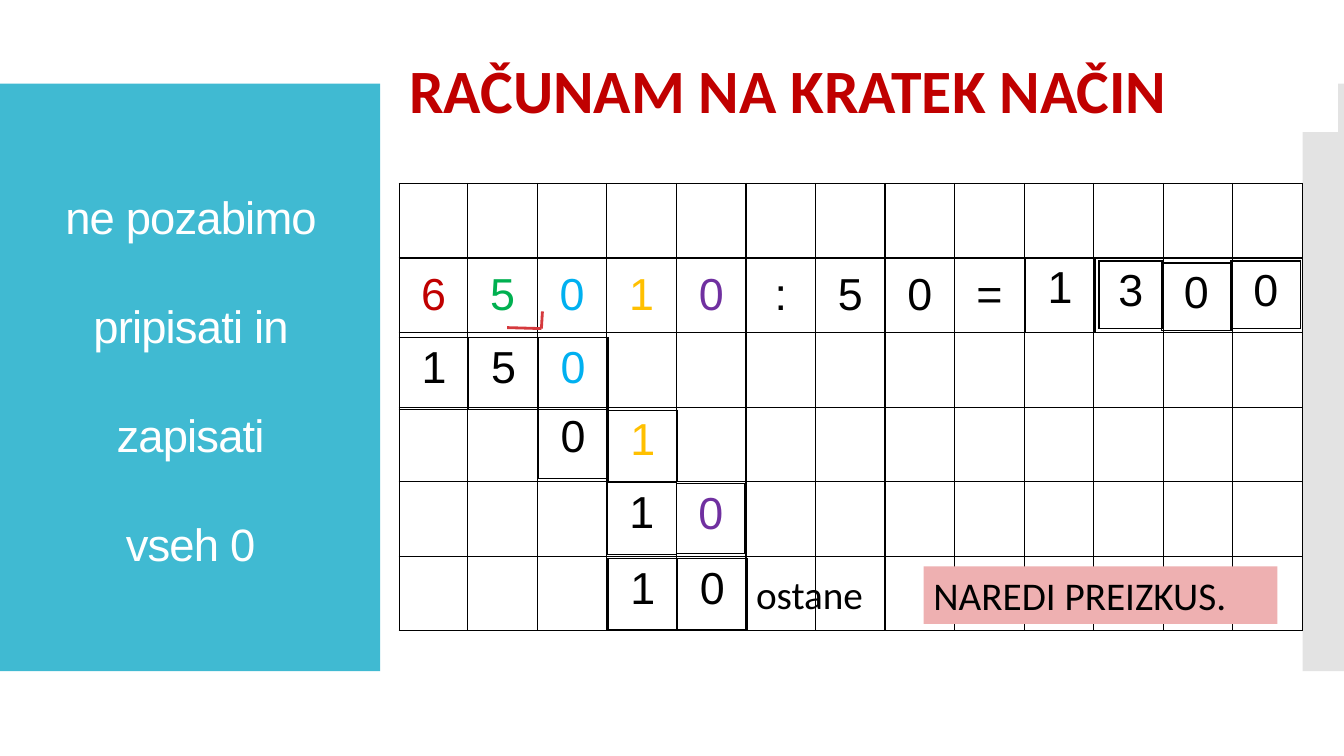
from lxml import etree
from pptx import Presentation
from pptx.dml.color import RGBColor
from pptx.enum.shapes import MSO_CONNECTOR, MSO_SHAPE
from pptx.enum.text import MSO_ANCHOR, PP_ALIGN
from pptx.oxml.ns import qn
from pptx.util import Pt

RECT = MSO_SHAPE.RECTANGLE
STRAIGHT = MSO_CONNECTOR.STRAIGHT
LEFT, CENTER = PP_ALIGN.LEFT, PP_ALIGN.CENTER
TOP, MIDDLE = MSO_ANCHOR.TOP, MSO_ANCHOR.MIDDLE
EMU_PER_PX = 9144  # 100 px to the inch

BLACK, WHITE, RED, GREEN = "000000", "FFFFFF", "C00000", "00B050"
BLUE, YELLOW, PURPLE = "00B0F0", "FFC000", "7030A0"
TEAL, GREY, PINK, MARK = "40BAD2", "C8C8C8", "EEB0B1", "D5393D"


def px(n):
    return n * EMU_PER_PX


def rgb(color):
    return RGBColor.from_string(color)


def write(tf, text, size=32, font="Arial", color=BLACK, bold=False,
          align=LEFT, leading=None, tracking=None):
    """Write each line of text as one paragraph."""
    for i, line in enumerate(text.split("\n")):
        p = tf.paragraphs[0] if i == 0 else tf.add_paragraph()
        p.alignment = align
        if leading:
            p.line_spacing = Pt(leading)
        r = p.add_run()
        r.text = line
        r.font.size, r.font.name, r.font.bold = Pt(size), font, bold
        r.font.color.rgb = rgb(color)
        if tracking:
            r.font._element.set("spc", str(tracking))


def spread(total, count):
    """Split a whole length into count nearly equal whole parts."""
    return [total * (i + 1) // count - total * i // count for i in range(count)]


class SlideBuilder:
    def __init__(self, slide, border=BLACK, border_pt=1):
        self.slide, self.border, self.border_pt = slide, border, border_pt

    def rect(self, x, y, w, h, fill, alpha=None):
        s = self.slide.shapes.add_shape(RECT, px(x), px(y), px(w), px(h))
        s.shadow.inherit = False
        s.fill.solid()
        s.fill.fore_color.rgb = rgb(fill)
        s.line.fill.background()
        if alpha:
            clr = s._element.spPr.find(".//" + qn("a:srgbClr"))
            etree.SubElement(clr, qn("a:alpha")).set("val", str(alpha * 1000))
        s.text_frame.word_wrap = True
        s.text_frame.vertical_anchor = TOP
        return s

    def label(self, x, y, w, h, text, fill=None, **style):
        if fill:
            s = self.rect(x, y, w, h, fill)
        else:
            s = self.slide.shapes.add_textbox(px(x), px(y), px(w), px(h))
            s.text_frame.word_wrap = True
        write(s.text_frame, text, **style)
        return s

    def line(self, x1, y1, x2, y2, color, width=2):
        s = self.slide.shapes.add_connector(STRAIGHT, px(x1), px(y1), px(x2), px(y2))
        s.line.color.rgb = rgb(color)
        s.line.width = Pt(width)
        etree.SubElement(s._element.spPr, qn("a:effectLst"))

    def borders(self, cell):
        tc_pr = cell._tc.get_or_add_tcPr()
        for side in ("lnL", "lnR", "lnT", "lnB"):
            ln = etree.SubElement(tc_pr, qn("a:" + side))
            ln.set("w", str(Pt(self.border_pt)))
            fill = etree.SubElement(ln, qn("a:solidFill"))
            etree.SubElement(fill, qn("a:srgbClr")).set("val", self.border)

    def grid(self, x, y, cols, rows, digits, anchor=TOP):
        """Draw a bordered table; digits maps (row, column) to (text, colour)."""
        frame = self.slide.shapes.add_table(
            len(rows), len(cols), px(x), px(y), px(sum(cols)), px(sum(rows)))
        table = frame.table
        table.first_row = table.horz_banding = False
        for col, w in zip(table.columns, cols):
            col.width = px(w)
        for row, h in zip(table.rows, rows):
            row.height = px(h)
        for r in range(len(rows)):
            for c in range(len(cols)):
                cell = table.cell(r, c)
                self.borders(cell)
                cell.fill.background()
                cell.vertical_anchor = anchor
                if (r, c) in digits:
                    text, color = digits[r, c]
                    write(cell.text_frame, text, color=color, align=CENTER)

    def digit_boxes(self, x, y, w, h, text, color=BLACK):
        """Draw a row of boxes, one digit in each."""
        digits = {(0, i): (digit, color) for i, digit in enumerate(text)}
        self.grid(x, y, [w] * len(text), [h], digits)


def main():
    prs = Presentation()
    prs.slide_width, prs.slide_height = px(1333), px(750)
    b = SlideBuilder(prs.slides.add_slide(prs.slide_layouts[6]))

    # Side panels
    b.rect(0, 83, 377, 583, TEAL)
    b.rect(1292, 83, 41, 583, GREY, alpha=50)
    reminder = b.label(28, 123, 322, 503,
                       "ne pozabimo pripisati in zapisati\nvseh 0",
                       size=32.4, color=WHITE, align=CENTER, leading=78, tracking=-60)
    reminder.text_frame.margin_top = px(10)

    # Squared paper with the division
    colors = [RED, GREEN, BLUE, YELLOW, PURPLE] + [BLACK] * 4
    division = {(1, i): pair for i, pair in enumerate(zip("65010:50=", colors))}
    b.grid(396, 182, spread(896, 13), [74] * 6, division, anchor=MIDDLE)

    # Quotient digits and partial remainders
    for box in [
        (534, 335, 69, 71, "0", BLUE),
        (1090, 259, 63, 67, "3"),
        (1017, 256, 69, 74, "1"),
        (603, 407, 69, 71, "1", YELLOW),
        (1221, 259, 69, 67, "0"),
        (671, 480, 68, 69, "0", PURPLE),
        (602, 479, 69, 71, "1"),
        (603, 554, 69, 71, "10"),
        (396, 335, 69, 71, "15"),
        (534, 404, 69, 71, "0"),
        (1152, 261, 69, 67, "0"),
    ]:
        b.digit_boxes(*box)

    # Corner mark after the first two digits
    b.line(503, 325, 537, 326, MARK)
    b.line(538, 309, 537, 326, MARK)

    # Heading and notes
    b.label(396, 47, 931, 84, "RAČUNAM NA KRATEK NAČIN", fill=WHITE,
            size=44, font="Calibri", color=RED, bold=True)
    b.label(740, 561, 151, 57, "ostane", size=28, font="Calibri")
    b.label(916, 562, 351, 57, "NAREDI PREIZKUS.", fill=PINK, size=28, font="Calibri")

    prs.save("out.pptx")


if __name__ == "__main__":
    main()
